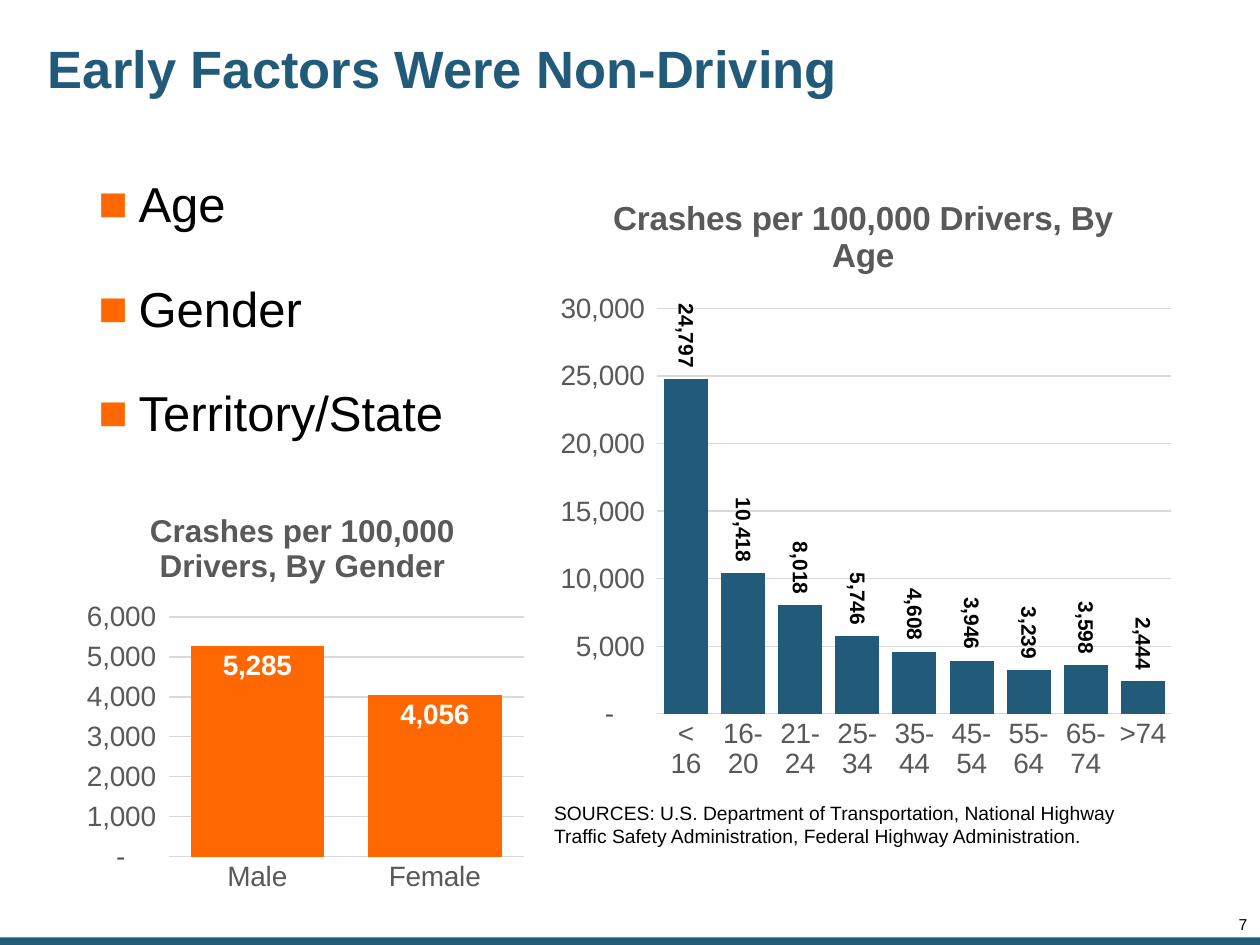
from collections import namedtuple
from dataclasses import dataclass

from lxml import etree
from pptx import Presentation
from pptx.chart.data import CategoryChartData
from pptx.dml.color import RGBColor
from pptx.enum.chart import XL_CHART_TYPE, XL_LABEL_POSITION, XL_TICK_MARK
from pptx.enum.shapes import MSO_SHAPE
from pptx.enum.text import MSO_ANCHOR, MSO_AUTO_SIZE, PP_ALIGN
from pptx.oxml.ns import qn
from pptx.util import Pt

COLUMN = XL_CHART_TYPE.COLUMN_CLUSTERED
OUTSIDE, INSIDE = XL_LABEL_POSITION.OUTSIDE_END, XL_LABEL_POSITION.INSIDE_END
NO_TICK = XL_TICK_MARK.NONE
RECTANGLE = MSO_SHAPE.RECTANGLE
TOP, MIDDLE = MSO_ANCHOR.TOP, MSO_ANCHOR.MIDDLE
NO_FIT, GROW = MSO_AUTO_SIZE.NONE, MSO_AUTO_SIZE.SHAPE_TO_FIT_TEXT
LEFT, RIGHT = PP_ALIGN.LEFT, PP_ALIGN.RIGHT

Box = namedtuple("Box", "left top width height")


@dataclass(frozen=True)
class Theme:
    """Colours, type sizes and formats shared by the slide."""
    font: str = "Arial"
    blue: str = "225A7A"
    orange: str = "FF6801"
    black: str = "000000"
    white: str = "FFFFFF"
    gray: str = "595959"
    rule: str = "D9D9D9"
    title: int = 30
    body: int = 28
    axis: int = 16
    label: int = 12
    source: int = 11
    number: int = 9
    count: str = '_(* #,##0_);_(* \\(#,##0\\);_(* "-"??_);_(@_)'


THEME = Theme()


def style_font(font, size, color, bold=False):
    """Apply the theme typeface with a size, colour and weight."""
    font.name, font.size, font.bold = THEME.font, Pt(size), bold
    font.color.rgb = RGBColor.from_string(color)


def add_bullet(para, indent):
    """Give a paragraph an orange square bullet with a hanging indent."""
    properties = para._p.get_or_add_pPr()
    properties.set("marL", str(Pt(indent)))
    properties.set("indent", str(-Pt(indent)))
    color = etree.SubElement(properties, qn("a:buClr"))
    etree.SubElement(color, qn("a:srgbClr")).set("val", THEME.orange)
    etree.SubElement(properties, qn("a:buFont")).set("typeface", THEME.font)
    etree.SubElement(properties, qn("a:buChar")).set("char", "■")


def write_text(shape, box, lines, size, color=THEME.black, bold=False, align=LEFT,
               anchor=TOP, inset=(3.6, 3.6), spacing=1.0, gap=0, indent=0, fit=NO_FIT):
    """Place a text shape in a box and fill it with formatted paragraphs."""
    shape.left, shape.top, shape.width, shape.height = map(Pt, box)
    frame = shape.text_frame
    frame.word_wrap, frame.auto_size, frame.vertical_anchor = True, fit, anchor
    frame.margin_left = frame.margin_right = Pt(inset[0])
    frame.margin_top = frame.margin_bottom = Pt(inset[1])
    for index, line in enumerate(lines):
        para = frame.add_paragraph() if index else frame.paragraphs[0]
        if indent:
            add_bullet(para, indent)
        para.alignment, para.line_spacing = align, spacing
        para.space_before = Pt(gap if index else 0)
        span = para.add_run()
        span.text = line
        style_font(span.font, size, color, bold)


def set_plot_area(chart, plot_box):
    """Fix the inner plot area as fractions of the chart."""
    area = chart._chartSpace.chart.plotArea
    for old in area.findall(qn("c:layout")):
        area.remove(old)
    layout = etree.Element(qn("c:layout"))
    area.insert(0, layout)
    manual = etree.SubElement(layout, qn("c:manualLayout"))
    values = [("layoutTarget", "inner"), ("xMode", "edge"), ("yMode", "edge")]
    values += zip("xywh", plot_box)
    for name, value in values:
        etree.SubElement(manual, qn(f"c:{name}")).set("val", str(value))


def style_axes(chart):
    """Format both axes and the value gridlines."""
    for axis in (chart.category_axis, chart.value_axis):
        axis.major_tick_mark = axis.minor_tick_mark = NO_TICK
        style_font(axis.tick_labels.font, THEME.axis, THEME.gray)
    values = chart.value_axis
    values.tick_labels.number_format = THEME.count
    values.tick_labels.number_format_is_linked = False
    values.minimum_scale = 0
    values.has_major_gridlines = True
    values.format.line.fill.background()
    for line in (chart.category_axis.format.line, values.major_gridlines.format.line):
        line.color.rgb = RGBColor.from_string(THEME.rule)
        line.width = Pt(0.75)


def add_column_chart(page, box, title, title_size, data, color, gap, plot_box, top, step,
                     label_size, label_color, position, rotation=0):
    """Draw a titled column chart with value labels."""
    chart_data = CategoryChartData(number_format=THEME.count)
    chart_data.categories = list(data)
    chart_data.add_series("Series 1", list(data.values()))
    chart = page.shapes.add_chart(COLUMN, *map(Pt, box), chart_data).chart
    style_font(chart.font, THEME.axis, THEME.gray)
    chart.has_legend = False
    chart.has_title = True
    span = chart.chart_title.text_frame.paragraphs[0].add_run()
    span.text = title
    style_font(span.font, title_size, THEME.gray, True)
    style_axes(chart)
    chart.value_axis.maximum_scale, chart.value_axis.major_unit = top, step
    set_plot_area(chart, plot_box)
    plot = chart.plots[0]
    plot.gap_width, plot.vary_by_categories = gap, False
    fill = plot.series[0].format.fill
    fill.solid()
    fill.fore_color.rgb = RGBColor.from_string(color)
    labels = plot.series[0].data_labels
    labels.show_value, labels.position = True, position
    labels.number_format, labels.number_format_is_linked = THEME.count, False
    style_font(labels.font, label_size, label_color, True)
    if rotation:
        body = labels._element.find(f"{qn('c:txPr')}/{qn('a:bodyPr')}")
        body.set("rot", str(rotation * 60000))
        body.set("vert", "horz")


def add_footer(page, box):
    """Draw the bottom band with the page number above its right end."""
    band = page.shapes.add_shape(RECTANGLE, *map(Pt, box))
    band.shadow.inherit = False
    band.fill.solid()
    band.fill.fore_color.rgb = RGBColor.from_string(THEME.blue)
    band.line.fill.background()
    number_box = Box(box.left + box.width - 42.5, box.top - 11.6, 35.3, 9.4)
    number = page.shapes.add_textbox(*map(Pt, number_box))
    write_text(number, number_box, ["7"], THEME.number, align=RIGHT, inset=(0, 0),
               spacing=0.85, fit=GROW)


def add_age_panel(page, box):
    """Place the age chart with its sources beneath."""
    ages = {"< 16": 24797, "16-20": 10418, "21-24": 8018, "25-34": 5746, "35-44": 4608,
            "45-54": 3946, "55-64": 3239, "65-74": 3598, ">74": 2444}
    source_height = 33.8
    chart_box = box._replace(height=box.height - source_height)
    add_column_chart(page, chart_box, "Crashes per 100,000 Drivers, By Age", 19, ages,
                     THEME.blue, 30, (0.18, 0.22, 0.8, 0.65), 30000, 5000,
                     THEME.label, THEME.black, OUTSIDE, rotation=90)
    source_box = Box(box.left, box.top + chart_box.height, box.width - 8, source_height)
    source = page.shapes.add_textbox(*map(Pt, source_box))
    write_text(source, source_box,
               ["SOURCES: U.S. Department of Transportation, National Highway Traffic "
                "Safety Administration, Federal Highway Administration."],
               THEME.source, inset=(7.2, 3.6), fit=GROW)


def add_gender_panel(page, box):
    """Place the gender chart."""
    add_column_chart(page, box, "Crashes per 100,000 Drivers, By Gender", 18,
                     {"Male": 5285, "Female": 4056}, THEME.orange, 33,
                     (0.21, 0.31, 0.77, 0.58), 6000, 1000,
                     THEME.axis, THEME.white, INSIDE)


def main():
    """Build and save the slide."""
    deck = Presentation()
    deck.slide_width, deck.slide_height = Pt(720), Pt(540)
    page = deck.slides.add_slide(deck.slide_layouts[1])
    add_footer(page, Box(0, 535.7, 720, 4.3))
    write_text(page.shapes.title, Box(23.8, 7.2, 582.5, 67.7),
               ["Early Factors Were Non-Driving"], THEME.title, THEME.blue, True,
               anchor=MIDDLE, spacing=0.9)
    write_text(page.placeholders[1], Box(52.6, 99.4, 244.8, 180),
               ["Age", "Gender", "Territory/State"], THEME.body,
               spacing=0.9, gap=29.4, indent=23)
    add_age_panel(page, Box(309.6, 97.9, 367.2, 390.2))
    add_gender_panel(page, Box(41, 279.4, 263.5, 236.2))
    deck.save("out.pptx")


if __name__ == "__main__":
    main()
